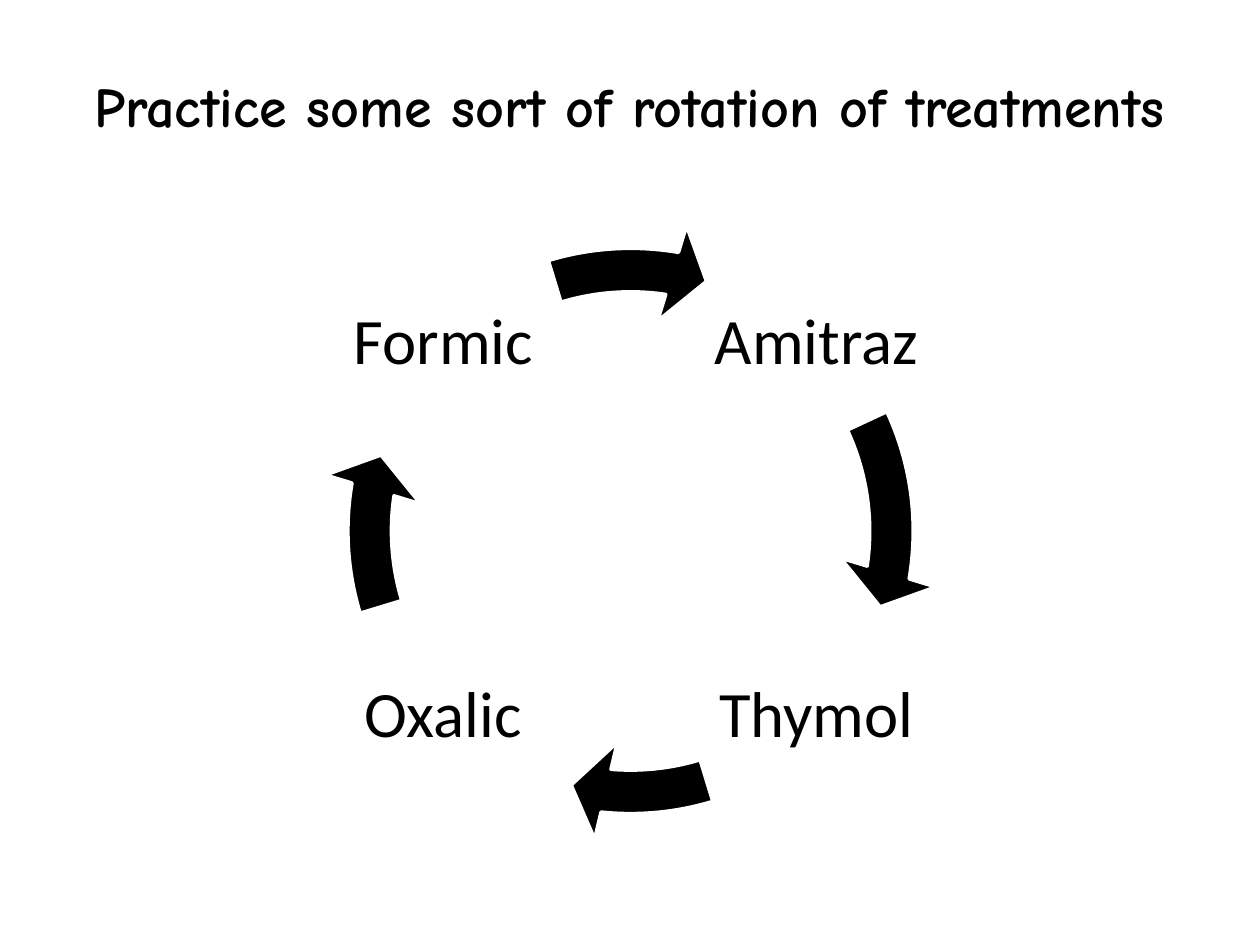
import pptx
import pptx.dml.color
import pptx.enum.shapes
import pptx.enum.text
import pptx.util

COLORS = {"ink": "000000", "paper": "FFFFFF"}

presentation = pptx.Presentation()
presentation.slide_width = pptx.util.Inches(10)
presentation.slide_height = pptx.util.Inches(7.5)
slide = presentation.slides.add_slide(presentation.slide_layouts[6])


def place(left, top, width, height):
    """Turn percentages of the slide's size into lengths."""
    across, down = presentation.slide_width / 100, presentation.slide_height / 100
    return [round(length) for length in (left * across, top * down, width * across, height * down)]


def add_label(text, box, size, font_name, bold=False):
    text_frame = slide.shapes.add_textbox(*place(*box)).text_frame
    text_frame.word_wrap = True
    text_frame.vertical_anchor = pptx.enum.text.MSO_ANCHOR.MIDDLE
    text_frame.margin_left = text_frame.margin_right = pptx.util.Inches(0.05)
    text_frame.margin_top = text_frame.margin_bottom = pptx.util.Inches(0.05)
    text_frame.text = text
    paragraph = text_frame.paragraphs[0]
    paragraph.alignment = pptx.enum.text.PP_ALIGN.CENTER
    paragraph.line_spacing = 0.9
    font = paragraph.runs[0].font
    font.name, font.size, font.bold = font_name, pptx.util.Pt(size), bold
    font.color.rgb = pptx.dml.color.RGBColor.from_string(COLORS["ink"])


add_label("Practice some sort of rotation of treatments", (0, 0, 100, 23.2), 32, "Comic Neue", True)

# Each treatment: label box in percent, then start and end of the arrow
# leaving it, in degrees clockwise from the right.
treatments = [
    ("Amitraz", (56.1, 28.4, 17.4, 15.87), 335.04, 9.16),
    ("Thymol", (56.1, 64.27, 17.4, 23.2), 73.09, 95.4),
    ("Oxalic", (25.1, 64.27, 20.1, 23.2), 163.09, 189.16),
    ("Formic", (26.5, 24.8, 17.4, 23.2), 253.09, 279.16),
]
CYCLE_BOX = (25.4, 23.33, 49.3, 65.73)
DEGREE = 0.6  # one degree in units of a shape adjustment
BAND, HEAD_ANGLE, HEAD_WIDTH = 0.07, 7.76, 0.08

for name, box, start, end in treatments:
    add_label(name, box, 37, "Calibri")
    arrow = slide.shapes.add_shape(
        pptx.enum.shapes.MSO_SHAPE.CIRCULAR_ARROW, *place(*CYCLE_BOX)
    )
    arrow.shadow.inherit = False
    settings = (BAND, HEAD_ANGLE * DEGREE, end * DEGREE, start * DEGREE, HEAD_WIDTH)
    for index, value in enumerate(settings):
        arrow.adjustments[index] = value
    arrow.fill.solid()
    arrow.fill.fore_color.rgb = pptx.dml.color.RGBColor.from_string(COLORS["ink"])
    arrow.line.color.rgb = pptx.dml.color.RGBColor.from_string(COLORS["paper"])
    arrow.line.width = pptx.util.Pt(2)

presentation.save("out.pptx")
